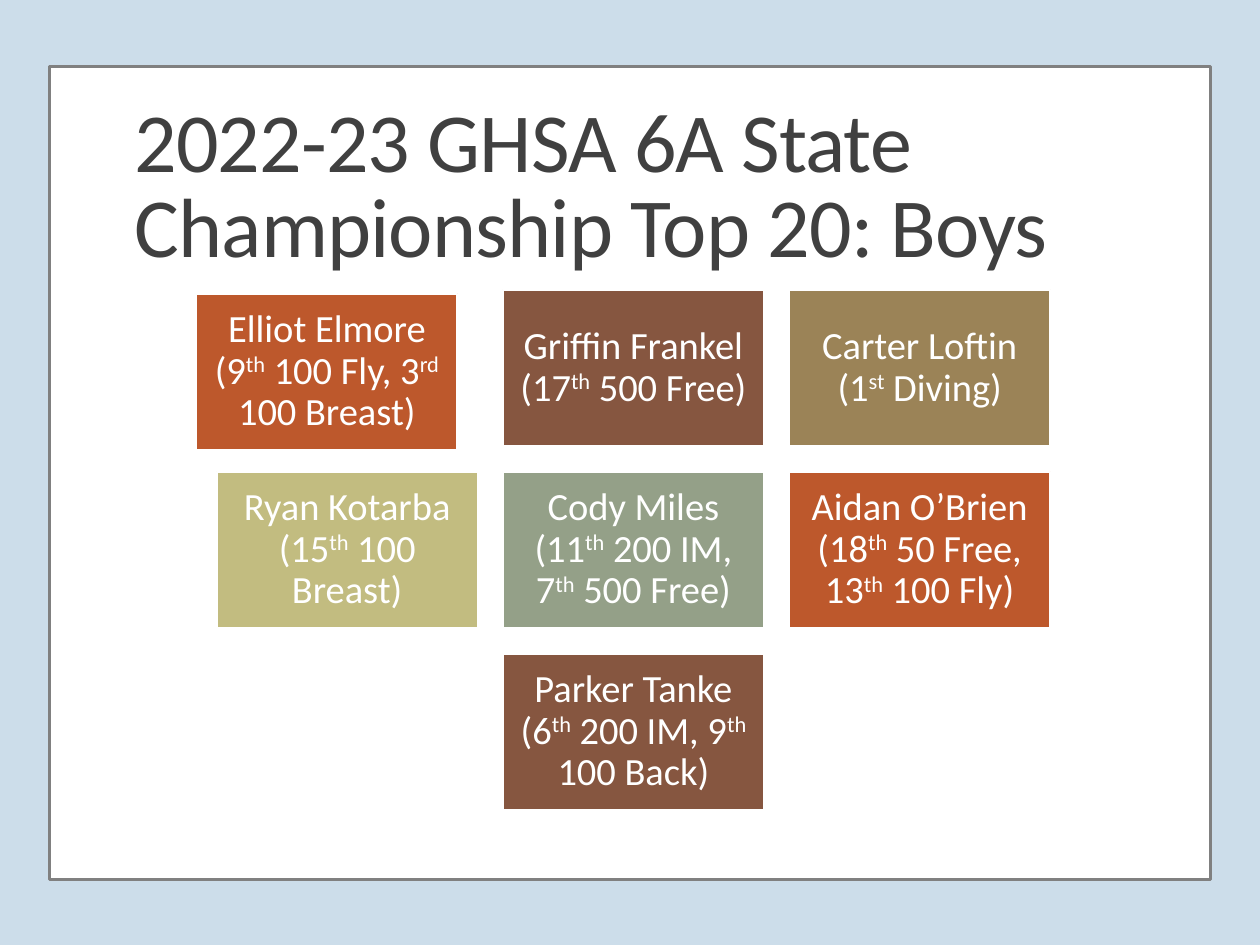
from pptx import Presentation
from pptx.dml.color import RGBColor
from pptx.enum.shapes import MSO_SHAPE
from pptx.enum.text import MSO_ANCHOR, MSO_AUTO_SIZE, PP_ALIGN
from pptx.util import Cm, Pt

RECTANGLE = MSO_SHAPE.RECTANGLE
MIDDLE, BOTTOM = MSO_ANCHOR.MIDDLE, MSO_ANCHOR.BOTTOM
LEFT, CENTER = PP_ALIGN.LEFT, PP_ALIGN.CENTER
NO_FIT = MSO_AUTO_SIZE.NONE

# Content: superscripts stand between carets
TITLE = "2022-23 GHSA 6A State Championship Top 20: Boys"
SWIMMERS = [  # text, colour, column, row
    ("Elliot Elmore (9^th^ 100 Fly, 3^rd^ 100 Breast)", "rust", 0, 0),
    ("Griffin Frankel (17^th^ 500 Free)", "brown", 1, 0),
    ("Carter Loftin (1^st^ Diving)", "tan", 2, 0),
    ("Ryan Kotarba (15^th^ 100 Breast)", "olive", 0, 1),
    ("Cody Miles (11^th^ 200 IM, 7^th^ 500 Free)", "sage", 1, 1),
    ("Aidan O’Brien (18^th^ 50 Free, 13^th^ 100 Fly)", "rust", 2, 1),
    ("Parker Tanke (6^th^ 200 IM, 9^th^ 100 Back)", "brown", 1, 2),
]
COLORS = {
    "sky": "CCDDEA", "white": "FFFFFF", "frame": "808080", "title": "404040",
    "rust": "BD582C", "brown": "865640", "tan": "9B8357",
    "olive": "C2BC80", "sage": "94A088",
}
FONT = "Calibri"

# Card grid, in centimetres
GRID_LEFT, GRID_TOP = 4.37, 5.84
CARD_WIDTH, CARD_HEIGHT = 5.26, 3.15
COLUMN_STEP, ROW_STEP = 5.77, 3.67
CARD_SHIFTS = {(0, 0): (-0.41, 0.08)}  # the first card sits off the grid
CARD_INSET = 0.23


def color(name):
    return RGBColor.from_string(COLORS[name])


def add_rectangle(page, left, top, width, height, fill, line=None, weight=0):
    box = page.shapes.add_shape(RECTANGLE, Cm(left), Cm(top), Cm(width), Cm(height))
    box.shadow.inherit = False
    box.fill.solid()
    box.fill.fore_color.rgb = color(fill)
    if line:
        box.line.color.rgb = color(line)
        box.line.width = Pt(weight)
    else:
        box.line.fill.background()
    return box


def style_span(span, size, fill):
    span.font.name = FONT
    span.font.size = Pt(size)
    span.font.color.rgb = color(fill)


def add_card(page, text, fill, column, row):
    shift_x, shift_y = CARD_SHIFTS.get((column, row), (0, 0))
    box = add_rectangle(page, GRID_LEFT + column * COLUMN_STEP + shift_x,
                        GRID_TOP + row * ROW_STEP + shift_y,
                        CARD_WIDTH, CARD_HEIGHT, fill, "white", 1.25)
    frame = box.text_frame
    frame.word_wrap = True
    frame.vertical_anchor = MIDDLE
    frame.margin_left = frame.margin_right = Cm(CARD_INSET)
    frame.margin_top = frame.margin_bottom = Cm(CARD_INSET)
    para = frame.paragraphs[0]
    para.alignment = CENTER
    para.line_spacing = 0.9
    for index, part in enumerate(text.split("^")):
        span = para.add_run()
        span.text = part
        style_span(span, 22, "white")
        if index % 2:
            span.font._element.set("baseline", "30000")


def format_title(title):
    title.left, title.top, title.width, title.height = Cm(2.46), Cm(1.63), Cm(20.96), Cm(4.04)
    frame = title.text_frame
    frame.text = TITLE
    frame.word_wrap = True
    frame.auto_size = NO_FIT
    frame.vertical_anchor = BOTTOM
    para = frame.paragraphs[0]
    para.alignment = LEFT
    para.line_spacing = 0.85
    span = para.runs[0]
    style_span(span, 48, "title")
    span.font._element.set("spc", "-50")


def main():
    deck = Presentation()
    deck.slide_width, deck.slide_height = Cm(25.4), Cm(19.05)
    page = deck.slides.add_slide(deck.slide_layouts[5])

    # Backdrop and framed panel
    add_rectangle(page, 0, 0, 25.4, 19.05, "sky")
    add_rectangle(page, 1, 1.35, 23.41, 16.38, "white", "frame", 1.75)

    # Title, brought in front of the panel
    title = page.shapes.title
    format_title(title)
    title.element.getparent().append(title.element)

    # Swimmer cards
    for swimmer in SWIMMERS:
        add_card(page, *swimmer)

    deck.save("out.pptx")


if __name__ == "__main__":
    main()
